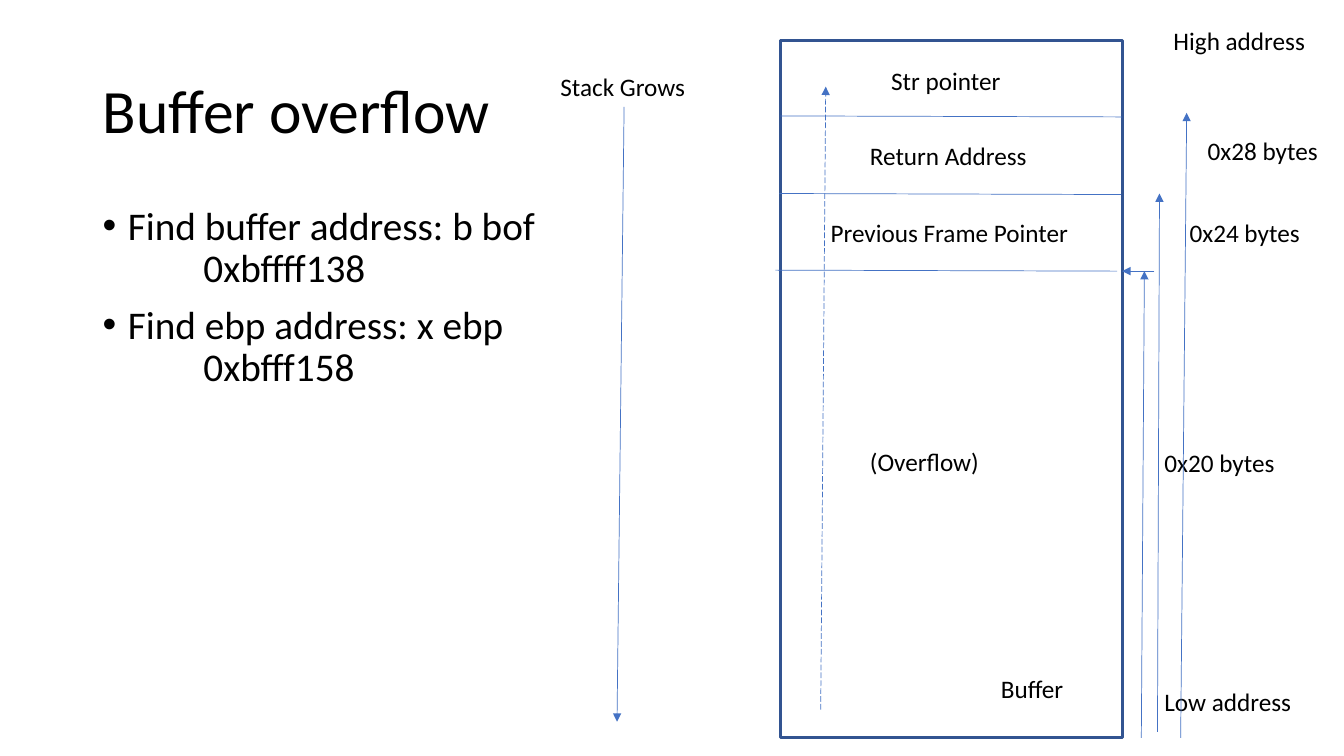
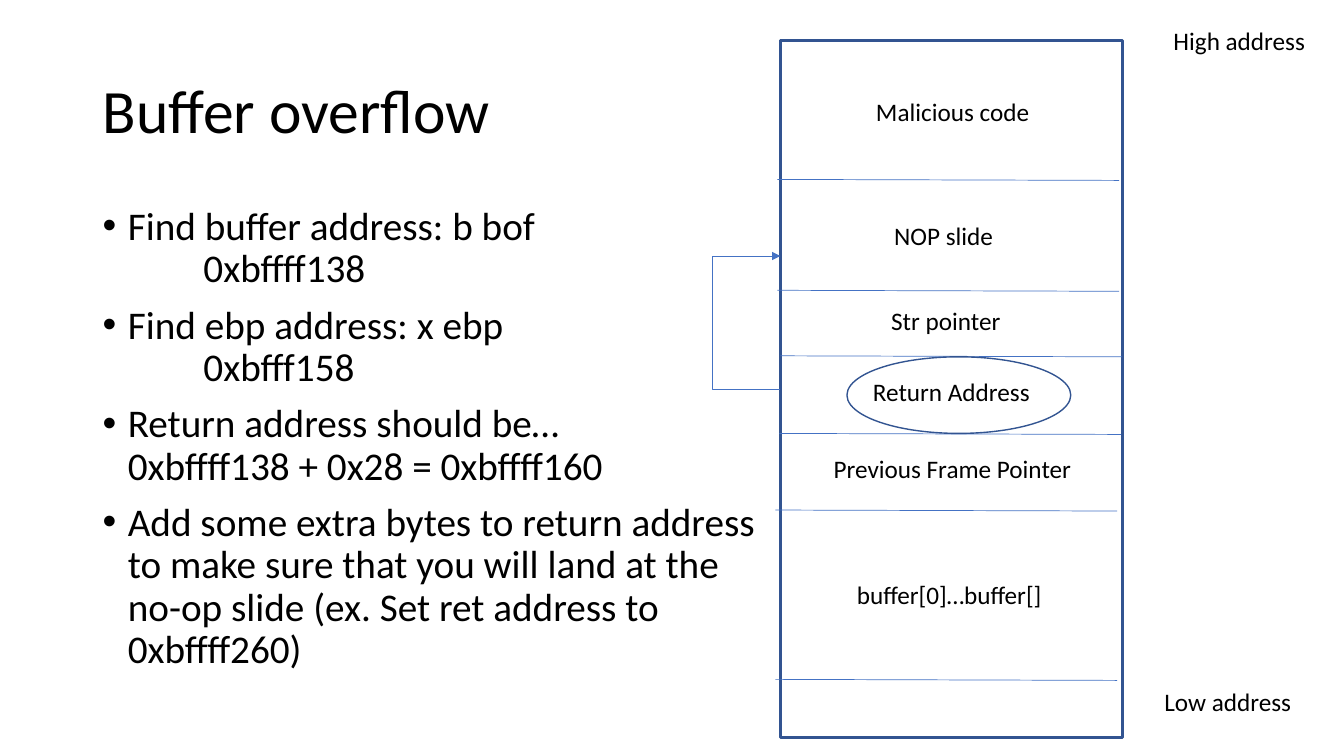
from dataclasses import dataclass
from typing import Any

from lxml import etree
from pptx import Presentation
from pptx import util as u
from pptx.dml.color import RGBColor
from pptx.enum import dml, shapes, text
from pptx.oxml.ns import qn

EMU_PER_PX = 9144
FONT = "Calibri"
COLOURS = {"text": "000000", "outline": "325491", "line": "4472C4"}
LABEL_HEIGHT = 40
DIVIDER_WIDTH = 339
BULLET_INDENT = 25
TAB_SIZE = 100

TITLE = "Buffer overflow"
FIND_STEPS = [
    "Find buffer address: b bof\n\t0xbffff138",
    "Find ebp address: x ebp\n\t0xbfff158",
]
RETURN_STEPS = [
    "Return address should be…\n0xbffff138 + 0x28 = 0xbffff160",
    "Add some extra bytes to return address\nto make sure that you will land at the\n"
    "no-op slide (ex. Set ret address to\n0xbffff260)",
]


@dataclass(frozen=True)
class Box:
    left: int
    top: int
    width: int
    height: int


@dataclass(frozen=True)
class Label:
    words: str
    left: int
    top: int
    width: int


@dataclass(frozen=True)
class Divider:
    left: int
    top: int


@dataclass(frozen=True)
class Arrow:
    start: tuple[int, int]
    end: tuple[int, int]
    dashed: bool = False


TITLE_BOX = Box(92, 40, 1150, 145)
BODY_BOX = Box(92, 200, 1150, 476)
STACK_BOX = Box(774, 40, 339, 692)
RETURN_RING = Box(840, 354, 222, 76)
RETURN_JUMP = Box(707, 254, 67, 132)

ADDRESS_ENDS = [
    Label("High address", 1154, 20, 152),
    Label("Low address", 1145, 676, 147),
]
FRAME_DIVIDERS = [Divider(774, 115), Divider(773, 192), Divider(769, 268)]
FRAME_LABELS = [
    Label("Stack Grows", 546, 66, 145),
    Label("(Overflow)", 853, 438, 130),
    Label("Buffer", 983, 663, 83),
    Label("Previous Frame Pointer", 814, 211, 258),
    Label("Return Address", 853, 134, 177),
    Label("Str pointer", 874, 60, 130),
    Label("0x20 bytes", 1145, 439, 131),
    Label("0x24 bytes", 1170, 211, 131),
    Label("0x28 bytes", 1188, 129, 131),
]
FRAME_ARROWS = [
    Arrow((1145, 269), (1113, 269)),
    Arrow((619, 106), (612, 716)),
    Arrow((814, 704), (819, 86), dashed=True),
    Arrow((1132, 732), (1135, 269)),
    Arrow((1148, 726), (1150, 192)),
    Arrow((1171, 732), (1177, 112)),
]
EXPLOIT_DIVIDERS = [
    Divider(774, 353),
    Divider(773, 430),
    Divider(769, 506),
    Divider(769, 674),
    Divider(771, 288),
    Divider(771, 178),
]
EXPLOIT_LABELS = [
    Label("buffer[0]…buffer[]", 840, 570, 206),
    Label("Previous Frame Pointer", 817, 445, 258),
    Label("Return Address", 856, 368, 177),
    Label("Str pointer", 874, 298, 130),
    Label("NOP slide", 877, 214, 119),
    Label("Malicious code", 859, 91, 174),
]


def px(length: int) -> u.Emu:
    return u.Emu(length * EMU_PER_PX)


def colour(name: str) -> RGBColor:
    return RGBColor.from_string(COLOURS[name])


def bounds(box: Box) -> tuple[u.Emu, u.Emu, u.Emu, u.Emu]:
    return px(box.left), px(box.top), px(box.width), px(box.height)


def apply(target: Any, values: dict[str, Any]) -> None:
    for name, value in values.items():
        setattr(target, name, value)


def write(paragraph: Any, words: str, size: int) -> None:
    paragraph.text = words
    paragraph.alignment = text.PP_ALIGN.LEFT
    for run in paragraph.runs:
        apply(run.font, {"name": FONT, "size": u.Pt(size)})
        run.font.color.rgb = colour("text")


def add_title(slide: Any) -> None:
    title = slide.shapes.title
    apply(title, dict(zip(("left", "top", "width", "height"), bounds(TITLE_BOX))))
    apply(title.text_frame, {
        "vertical_anchor": text.MSO_ANCHOR.MIDDLE,
        "auto_size": text.MSO_AUTO_SIZE.NONE,
        "word_wrap": True,
    })
    paragraph = title.text_frame.paragraphs[0]
    write(paragraph, TITLE, 44)
    paragraph.line_spacing = 0.9


def add_bullets(slide: Any, steps: list[str]) -> None:
    frame = slide.shapes.add_textbox(*bounds(BODY_BOX)).text_frame
    frame.word_wrap = True
    for index, step in enumerate(steps):
        paragraph = frame.add_paragraph() if index else frame.paragraphs[0]
        write(paragraph, step, 28)
        apply(paragraph, {"line_spacing": 0.9, "space_before": u.Pt(10)})
        properties = paragraph._p.get_or_add_pPr()
        for name, length in {
            "marL": BULLET_INDENT, "indent": -BULLET_INDENT, "defTabSz": TAB_SIZE,
        }.items():
            properties.set(name, str(px(length)))
        etree.SubElement(properties, qn("a:buFont"), typeface="Arial")
        etree.SubElement(properties, qn("a:buChar"), char="•")


def add_label(slide: Any, label: Label) -> None:
    box = Box(label.left, label.top, label.width, LABEL_HEIGHT)
    frame = slide.shapes.add_textbox(*bounds(box)).text_frame
    apply(frame, {"word_wrap": False, "auto_size": text.MSO_AUTO_SIZE.SHAPE_TO_FIT_TEXT})
    write(frame.paragraphs[0], label.words, 18)


def add_outline(slide: Any, kind: Any, box: Box, weight: float) -> None:
    shape = slide.shapes.add_shape(kind, *bounds(box))
    shape.shadow.inherit = False
    shape.fill.background()
    shape.line.color.rgb = colour("outline")
    shape.line.width = u.Pt(weight)


def add_line(
    slide: Any,
    start: tuple[int, int],
    end: tuple[int, int],
    kind: Any = shapes.MSO_CONNECTOR.STRAIGHT,
) -> Any:
    connector = slide.shapes.add_connector(kind, *map(px, start + end))
    connector.line.color.rgb = colour("line")
    connector.line.width = u.Pt(0.5)
    etree.SubElement(connector.element.spPr, qn("a:effectLst"))
    return connector


def add_divider(slide: Any, divider: Divider) -> None:
    end = (divider.left + DIVIDER_WIDTH, divider.top + 1)
    add_line(slide, (divider.left, divider.top), end)


def add_arrow(slide: Any, arrow: Arrow) -> None:
    connector = add_line(slide, arrow.start, arrow.end)
    if arrow.dashed:
        connector.line.dash_style = dml.MSO_LINE.LONG_DASH
    line = connector.element.spPr.find(qn("a:ln"))
    etree.SubElement(line, qn("a:tailEnd"), type="triangle")


def add_return_jump(slide: Any, box: Box) -> None:
    corner = (box.left, box.top)
    opposite = (box.left + box.width, box.top + box.height)
    elbow = add_line(slide, corner, opposite, shapes.MSO_CONNECTOR.ELBOW)
    properties = elbow.element.spPr
    properties.find(qn("a:prstGeom")).set("prst", "bentConnector2")
    properties.find(qn("a:xfrm")).set("rot", str(180 * 60000))
    add_arrow(slide, Arrow(corner, (opposite[0], box.top)))


def add_stack_slide(
    presentation: Any, steps: list[str], dividers: list[Divider], labels: list[Label]
) -> Any:
    slide = presentation.slides.add_slide(presentation.slide_layouts[5])
    add_title(slide)
    add_bullets(slide, steps)
    add_outline(slide, shapes.MSO_SHAPE.RECTANGLE, STACK_BOX, 2.25)
    for divider in dividers:
        add_divider(slide, divider)
    for label in labels + ADDRESS_ENDS:
        add_label(slide, label)
    return slide


def main() -> None:
    presentation = Presentation()
    apply(presentation, {"slide_width": px(1333), "slide_height": px(750)})

    frame_slide = add_stack_slide(presentation, FIND_STEPS, FRAME_DIVIDERS, FRAME_LABELS)
    for arrow in FRAME_ARROWS:
        add_arrow(frame_slide, arrow)

    exploit_slide = add_stack_slide(
        presentation, FIND_STEPS + RETURN_STEPS, EXPLOIT_DIVIDERS, EXPLOIT_LABELS
    )
    add_outline(exploit_slide, shapes.MSO_SHAPE.OVAL, RETURN_RING, 1)
    add_return_jump(exploit_slide, RETURN_JUMP)

    presentation.save("out.pptx")


if __name__ == "__main__":
    main()
